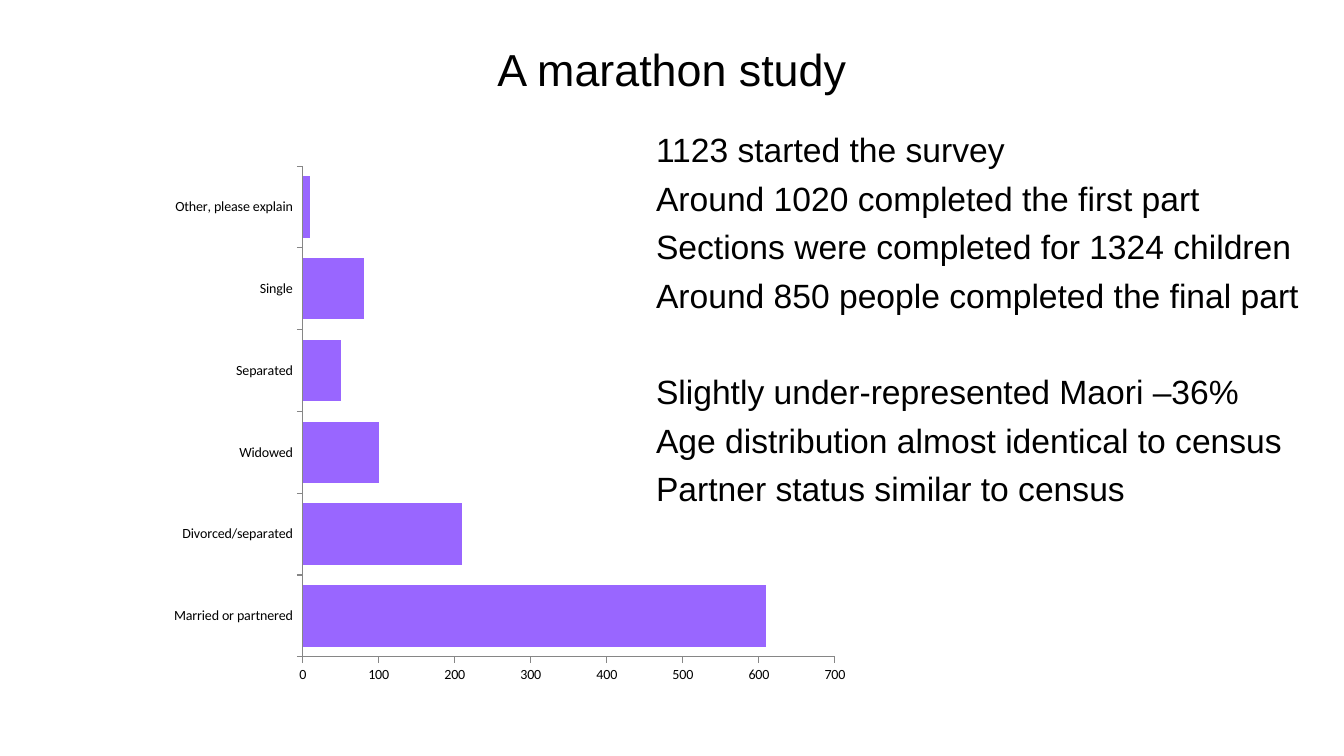
"""Build the marathon study slide: survey facts beside a partner status bar chart."""
from dataclasses import dataclass

from lxml.etree import SubElement
from pptx import Presentation
from pptx.chart.data import CategoryChartData
from pptx.dml.color import RGBColor
from pptx.enum.chart import XL_CHART_TYPE, XL_TICK_LABEL_POSITION, XL_TICK_MARK
from pptx.enum.text import MSO_ANCHOR, PP_ALIGN
from pptx.oxml.ns import qn
from pptx.util import Inches, Pt

WIDTH, HEIGHT = Inches(13.33), Inches(7.5)
COLS, ROWS = 40, 30


@dataclass(frozen=True)
class Theme:
    """Colours, fonts and type sizes."""
    ink: RGBColor = RGBColor(0, 0, 0)
    bar: RGBColor = RGBColor(0x99, 0x66, 0xFF)
    axis: RGBColor = RGBColor(0x86, 0x86, 0x86)
    text_font: str = "Arial"
    chart_font: str = "Calibri"
    title: Pt = Pt(32)
    body: Pt = Pt(24)
    label: Pt = Pt(10)


@dataclass(frozen=True)
class Frame:
    """A place on the slide grid, in columns and rows."""
    col: float
    row: float
    cols: float
    rows: float

    def box(self) -> tuple[int, int, int, int]:
        """Return left, top, width and height in EMU."""
        return (int(WIDTH * self.col / COLS), int(HEIGHT * self.row / ROWS),
                int(WIDTH * self.cols / COLS), int(HEIGHT * self.rows / ROWS))


@dataclass(frozen=True)
class Line:
    """One paragraph and the space above it in points."""
    text: str
    before: float = 6


@dataclass(frozen=True)
class TextBlock:
    """A text box with its lines and format."""
    frame: Frame
    lines: tuple[Line, ...]
    size: Pt
    align: PP_ALIGN = PP_ALIGN.LEFT
    anchor: MSO_ANCHOR = MSO_ANCHOR.TOP


THEME = Theme()
BLOCKS = (
    TextBlock(Frame(2, 1.2, 36, 3.04), (Line("A marathon study", 0),),
              THEME.title, PP_ALIGN.CENTER, MSO_ANCHOR.MIDDLE),
    TextBlock(Frame(19.23, 4.92, 20.77, 21.88), (
        Line("1123 started the survey", 2),
        Line("Around 1020 completed the first part"),
        Line("Sections were completed for 1324 children"),
        Line("Around 850 people completed the final part"),
        Line("Slightly under-represented Maori –36%", 39.6),
        Line("Age distribution almost identical to census"),
        Line("Partner status similar to census"),
    ), THEME.body),
)
CHART_FRAME = Frame(2.34, 6.48, 23.4, 22.16)
PLOT = {"x": 0.285, "y": 0.005, "w": 0.677, "h": 0.879}
PARTNER_STATUS = {
    "Married or partnered": 610,
    "Divorced/separated": 210,
    "Widowed": 100,
    "Separated": 50,
    "Single": 80,
    "Other, please explain": 10,
}


def apply(obj, values: dict) -> None:
    """Set each named attribute on an object."""
    for name, value in values.items():
        setattr(obj, name, value)


def style_font(font, name: str, size: Pt) -> None:
    """Give a font its face, size and ink."""
    apply(font, {"name": name, "size": size, "bold": False})
    font.color.rgb = THEME.ink


def add_text(s, block: TextBlock) -> None:
    """Draw one text block."""
    tf = s.shapes.add_textbox(*block.frame.box()).text_frame
    apply(tf, {"word_wrap": True, "vertical_anchor": block.anchor})
    for i, line in enumerate(block.lines):
        p = tf.add_paragraph() if i else tf.paragraphs[0]
        apply(p, {"alignment": block.align, "space_before": Pt(line.before)})
        r = p.add_run()
        r.text = line.text
        style_font(r.font, THEME.text_font, block.size)


def place_plot(chart) -> None:
    """Fix the inner plot area as shares of the chart."""
    area = chart.element.find(".//" + qn("c:plotArea"))
    for old in area.findall(qn("c:layout")):
        area.remove(old)
    layout = SubElement(area, qn("c:layout"))
    area.insert(0, layout)
    manual = SubElement(layout, qn("c:manualLayout"))
    modes = {"layoutTarget": "inner", "xMode": "edge", "yMode": "edge"}
    for tag, value in (modes | PLOT).items():
        SubElement(manual, qn(f"c:{tag}")).set("val", str(value))


def add_status_chart(s) -> None:
    """Draw the partner status bars."""
    data = CategoryChartData()
    data.categories = list(PARTNER_STATUS)
    data.add_series("Series 1", list(PARTNER_STATUS.values()))
    chart = s.shapes.add_chart(XL_CHART_TYPE.BAR_CLUSTERED, *CHART_FRAME.box(), data).chart
    apply(chart, {"has_legend": False, "has_title": False})
    style_font(chart.font, THEME.chart_font, THEME.label)
    plot = chart.plots[0]
    apply(plot, {"gap_width": 33, "vary_by_categories": False})
    fill = plot.series[0].format.fill
    fill.solid()
    fill.fore_color.rgb = THEME.bar
    for axis in (chart.category_axis, chart.value_axis):
        apply(axis, {"has_major_gridlines": False,
                     "major_tick_mark": XL_TICK_MARK.OUTSIDE,
                     "minor_tick_mark": XL_TICK_MARK.NONE,
                     "tick_label_position": XL_TICK_LABEL_POSITION.NEXT_TO_AXIS})
        axis.format.line.color.rgb = THEME.axis
        axis.format.line.width = Pt(0.75)
    apply(chart.value_axis, {"minimum_scale": 0, "maximum_scale": 700, "major_unit": 100})
    place_plot(chart)


def main() -> None:
    """Build and save the slide."""
    prs = Presentation()
    apply(prs, {"slide_width": WIDTH, "slide_height": HEIGHT})
    s = prs.slides.add_slide(prs.slide_layouts[6])
    for block in BLOCKS:
        add_text(s, block)
    add_status_chart(s)
    prs.save("out.pptx")


if __name__ == "__main__":
    main()
